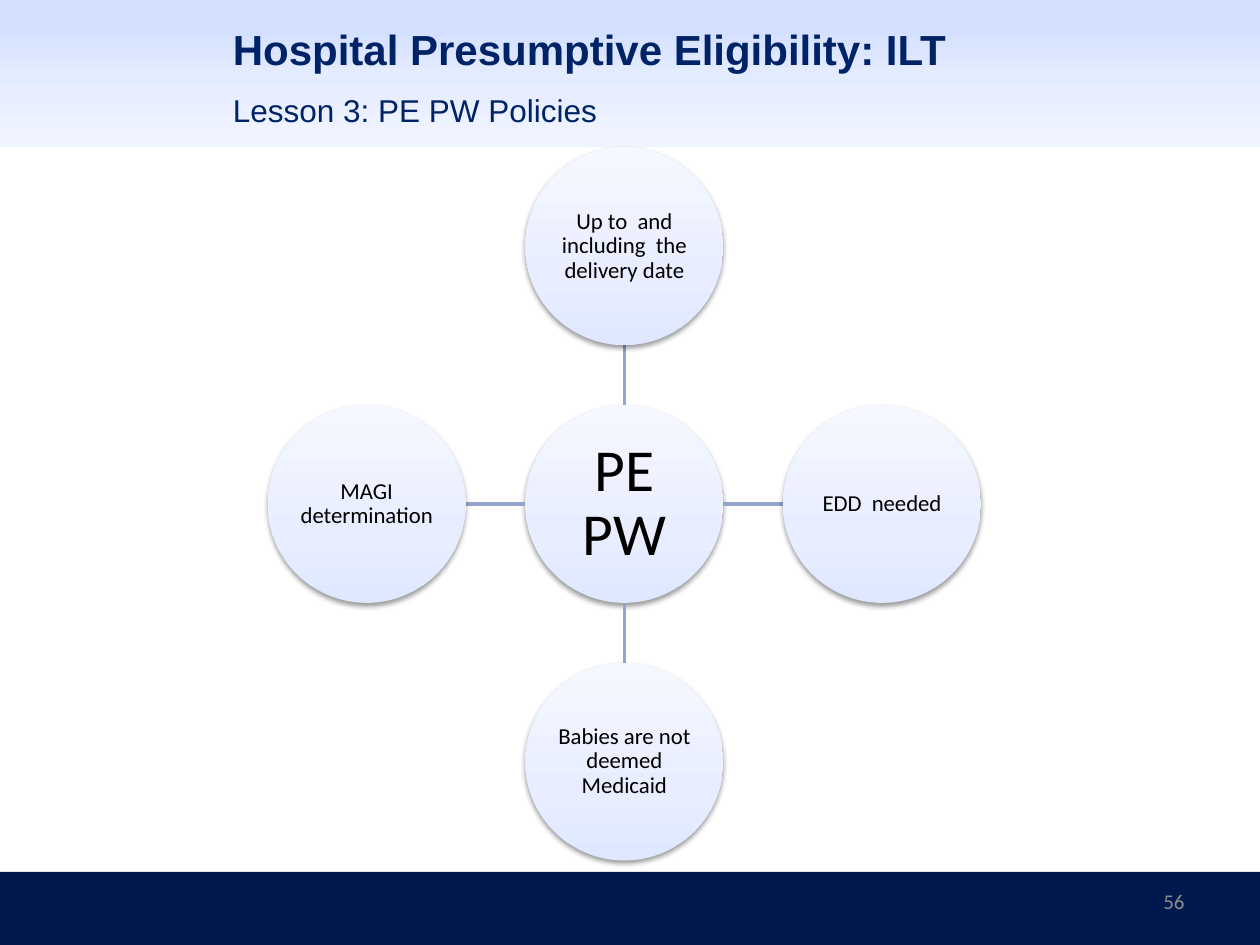
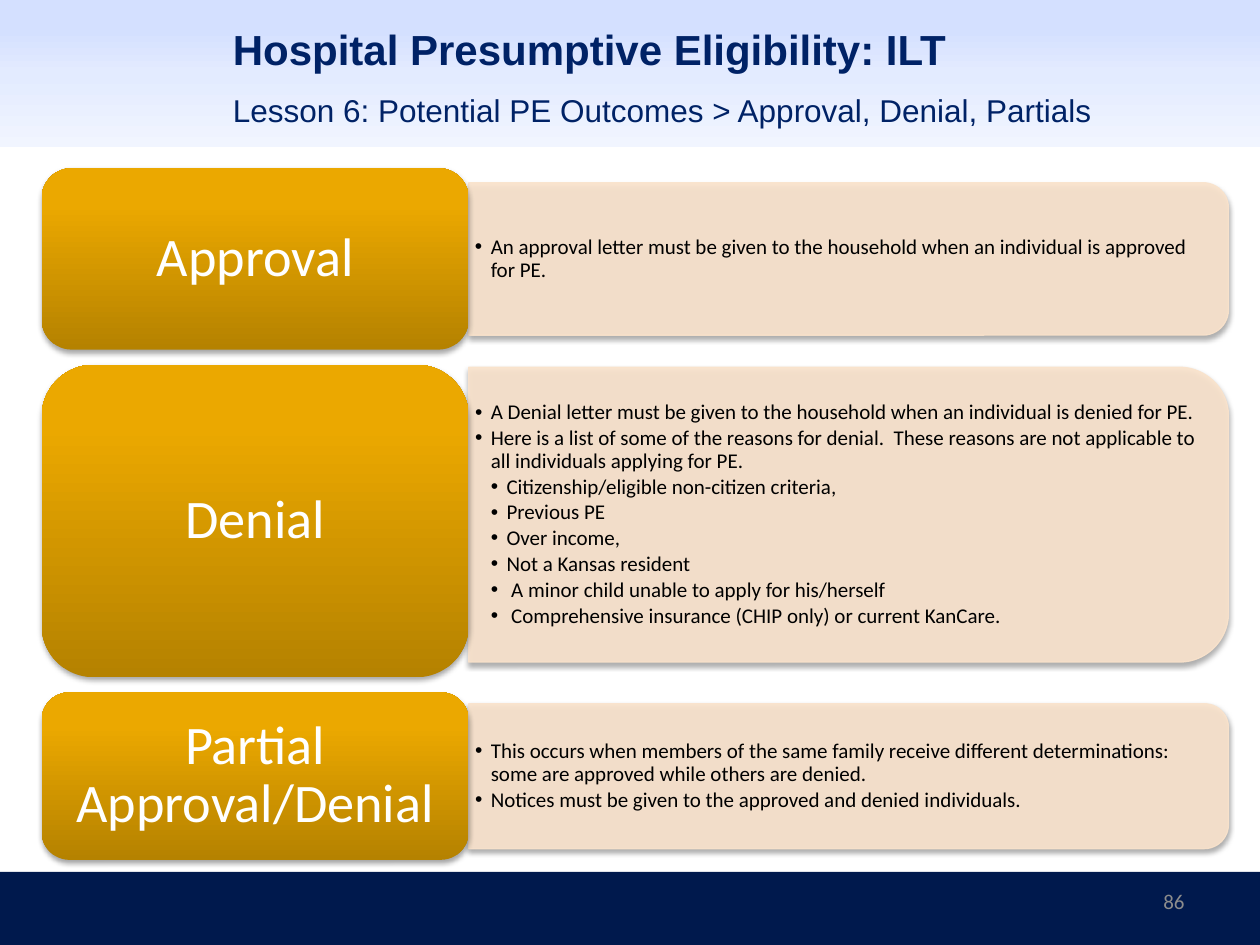
from typing import NamedTuple

from lxml import etree
from pptx import Presentation
from pptx import util as u
from pptx.dml.color import RGBColor
from pptx.enum import shapes, text
from pptx.oxml.ns import qn

# Shared look
HUES = {
    "navy": "00194D", "title": "002266", "page": "8C8C8C", "black": "000000",
    "white": "FFFFFF", "spoke": "93A5CC", "panel": "FAE3CC",
}
FADES = {
    "head": ([(20, "D4E0FF"), (50, "E3EBFF"), (100, "F1F5FF")], 90),
    "disc": ([(0, "DFE8FF"), (35, "E8EEFF"), (100, "F6F8FF")], 270),
    "gold": ([(0, "B58200"), (80, "EBA800"), (100, "EDA900")], 270),
}
WIDE, HIGH = 10, 7.5
KIND = shapes.MSO_SHAPE
ALIGN = text.PP_ALIGN
MID = text.MSO_ANCHOR.MIDDLE
CORNER = 0.1667  # default corner radius of rounded shapes
SLOPE = 0.29     # share of the radius that the text keeps clear


class Area(NamedTuple):
    left: float
    top: float
    wide: float
    high: float


class Style(NamedTuple):
    size: float
    hue: str = "black"
    face: str = "Calibri"
    bold: bool = False
    align: ALIGN = ALIGN.LEFT
    pitch: float = 1.0
    after: float = 0  # share of the text size


class Spoke(NamedTuple):
    label: str
    right: int
    down: int


class Point(NamedTuple):
    label: str
    level: int = 1


class Row(NamedTuple):
    label: str
    high: float
    panel: float  # panel height
    shift: float  # panel centre against row centre
    points: list[Point]


TITLE = Style(24, "title", "Arial", True)
LESSON = Style(18, "title", "Arial")
PAGE = Style(12, "page", align=ALIGN.RIGHT)
HUB = Style(34, align=ALIGN.CENTER, pitch=0.9, after=0.35)
DISC = HUB._replace(size=13)
NAME = HUB._replace(size=31, hue="white")
POINT = Style(12, pitch=0.9, after=0.15)


# Drawing helpers
def rgb(hue: str) -> RGBColor:
    return RGBColor.from_string(HUES[hue])


def add_sub(node, tag: str, **attrs):
    return etree.SubElement(node, qn(tag), {k: str(v) for k, v in attrs.items()})


def fade(shape, name: str) -> None:
    stops, angle = FADES[name]
    shape.fill.solid()
    old = shape._element.spPr.find(qn("a:solidFill"))
    grad = etree.Element(qn("a:gradFill"), rotWithShape="1")
    row = add_sub(grad, "a:gsLst")
    for place, hue in stops:
        add_sub(add_sub(row, "a:gs", pos=place * 1000), "a:srgbClr", val=hue)
    add_sub(grad, "a:lin", ang=angle * 60000, scaled=0)
    old.getparent().replace(old, grad)


def shade(shape, alpha: int, dist: float) -> None:
    effect = shape._element.spPr.find(qn("a:effectLst"))
    drop = add_sub(effect, "a:outerShdw", blurRad=u.Pt(3.1), dist=u.Pt(dist),
                   dir=90 * 60000, rotWithShape=0)
    hue = add_sub(drop, "a:srgbClr", val=HUES["black"])
    add_sub(hue, "a:alpha", val=alpha * 1000)


def add_form(slide, kind, area: Area):
    shape = slide.shapes.add_shape(kind, *map(u.Inches, area))
    shape.shadow.inherit = False
    shape.line.fill.background()
    return shape


def dress(para, style: Style) -> None:
    para.alignment = style.align
    para.line_spacing = style.pitch
    para.space_after = u.Pt(style.size * style.after)
    for run in para.runs:
        font = run.font
        font.size, font.name, font.bold = u.Pt(style.size), style.face, style.bold
        font.color.rgb = rgb(style.hue)


def inset(frame, side: float, ends: float) -> None:
    frame.word_wrap = True
    frame.margin_left = frame.margin_right = u.Inches(side)
    frame.margin_top = frame.margin_bottom = u.Inches(ends)


def write(shape, label: str, style: Style, side: float = 0.1,
          ends: float = 0.05, anchor=MID) -> None:
    frame = shape.text_frame
    frame.text = label
    inset(frame, side, ends)
    frame.vertical_anchor = anchor
    dress(frame.paragraphs[0], style)


def add_text(slide, area: Area, label: str, style: Style, anchor=MID) -> None:
    write(slide.shapes.add_textbox(*map(u.Inches, area)), label, style, anchor=anchor)


def add_base(deck, lesson: str, page: int):
    slide = deck.slides.add_slide(deck.slide_layouts[6])
    foot = add_form(slide, KIND.RECTANGLE, Area(0, 6.92, WIDE, 0.58))
    foot.fill.solid()
    foot.fill.fore_color.rgb = rgb("navy")
    fade(add_form(slide, KIND.RECTANGLE, Area(0, 0, WIDE, 1.17)), "head")
    add_text(slide, Area(7.17, 6.95, 2.33, 0.4), str(page), PAGE)
    add_text(slide, Area(1.75, 0.08, 7.75, 0.62),
             "Hospital Presumptive Eligibility: ILT", TITLE)
    add_text(slide, Area(1.75, 0.67, 7.75, 0.5), lesson, LESSON, text.MSO_ANCHOR.TOP)
    return slide


# Hub and spokes
MID_X, MID_Y, STEP, DIAM = 4.955, 4.0, 2.045, 1.57
SPOKES = [
    Spoke("Up to  and including  the delivery date", 0, -1),
    Spoke("EDD  needed", 1, 0),
    Spoke("Babies are not deemed Medicaid", 0, 1),
    Spoke("MAGI determination", -1, 0),
]


def add_disc(slide, x: float, y: float, label: str, style: Style, pad: float) -> None:
    disc = add_form(slide, KIND.OVAL, Area(x - DIAM / 2, y - DIAM / 2, DIAM, DIAM))
    fade(disc, "disc")
    shade(disc, 38, 1.6)
    write(disc, label, style, pad, pad)


def add_spoke(slide, spoke: Spoke) -> None:
    near, far = DIAM / 2, STEP - DIAM / 2
    ends = [pos for reach in (near, far)
            for pos in (MID_X + spoke.right * reach, MID_Y + spoke.down * reach)]
    line = slide.shapes.add_connector(shapes.MSO_CONNECTOR.STRAIGHT,
                                      *map(u.Inches, ends))
    line.line.color.rgb = rgb("spoke")
    line.line.width = u.Pt(2)
    add_sub(line._element.spPr, "a:effectLst")
    add_disc(slide, MID_X + spoke.right * STEP, MID_Y + spoke.down * STEP,
             spoke.label, DISC, 0.01)


def add_hub(deck) -> None:
    slide = add_base(deck, "Lesson 3: PE PW Policies", 56)
    add_disc(slide, MID_X, MID_Y, "PE PW", HUB, 0.02)
    for spoke in SPOKES:
        add_spoke(slide, spoke)


# Outcome rows
LEFT, TOP, SPLIT, PANEL, GAP = 0.33, 1.335, 3.72, 6.03, 0.12
ROWS = [
    Row("Approval", 1.44, 1.21, 0, [
        Point("An approval letter must be given to the household when an "
              "individual is approved for PE."),
    ]),
    Row("Denial", 2.48, 2.34, -0.05, [
        Point("A Denial letter must be given to the household when an "
              "individual is denied for PE."),
        Point("Here is a list of some of the reasons for denial.  These reasons "
              "are not applicable to all individuals applying for PE."),
        Point("Citizenship/eligible non-citizen criteria,", 2),
        Point("Previous PE", 2),
        Point("Over income,", 2),
        Point("Not a Kansas resident", 2),
        Point(" A minor child unable to apply for his/herself", 2),
        Point(" Comprehensive insurance (CHIP only) or current KanCare.", 2),
    ]),
    Row("Partial Approval/Denial", 1.33, 1.15, 0, [
        Point("This occurs when members of the same family receive different "
              "determinations: some are approved while others are denied."),
        Point("Notices must be given to the approved and denied individuals."),
    ]),
]


def add_panel(slide, mid: float, high: float) -> None:
    panel = add_form(slide, KIND.ROUND_2_SAME_RECTANGLE,
                     Area(SPLIT + (PANEL - high) / 2, mid - PANEL / 2, high, PANEL))
    panel.rotation = 90
    panel.line.width = u.Pt(0.75)
    for fill in (panel.fill, panel.line.fill):
        fill.solid()
        fill.fore_color.rgb = rgb("panel")
    for hue in panel._element.spPr.iter(qn("a:srgbClr")):
        add_sub(hue, "a:alpha", val=90000)
    shade(panel, 35, 1.8)


def add_points(slide, mid: float, row: Row) -> None:
    clear = row.panel * CORNER * SLOPE
    high = row.panel - 2 * clear
    area = Area(SPLIT, mid - high / 2, PANEL - clear, high)
    frame = slide.shapes.add_textbox(*map(u.Inches, area)).text_frame
    frame.text = "\n".join(point.label for point in row.points)
    inset(frame, 0.05, 0.03)
    frame.vertical_anchor = MID
    for para, point in zip(frame.paragraphs, row.points):
        props = para._p.get_or_add_pPr()
        props.set("marL", str(u.Inches(0.125 * point.level)))
        props.set("indent", str(u.Inches(-0.125)))
        add_sub(props, "a:buFont", typeface="Arial")
        add_sub(props, "a:buChar", char="•")
        dress(para, POINT)


def add_rows(deck) -> None:
    slide = add_base(
        deck, "Lesson 6: Potential PE Outcomes > Approval, Denial, Partials", 86)
    top = TOP
    for row in ROWS:
        mid = top + row.high / 2 + row.shift
        add_panel(slide, mid, row.panel)
        add_points(slide, mid, row)
        box = add_form(slide, KIND.ROUNDED_RECTANGLE,
                       Area(LEFT, top, SPLIT - LEFT, row.high))
        fade(box, "gold")
        shade(box, 35, 1.8)
        write(box, row.label, NAME, 0.13, 0.06)
        top += row.high + GAP


def main() -> None:
    deck = Presentation()
    deck.slide_width, deck.slide_height = u.Inches(WIDE), u.Inches(HIGH)
    add_hub(deck)
    add_rows(deck)
    deck.save("out.pptx")


if __name__ == "__main__":
    main()
